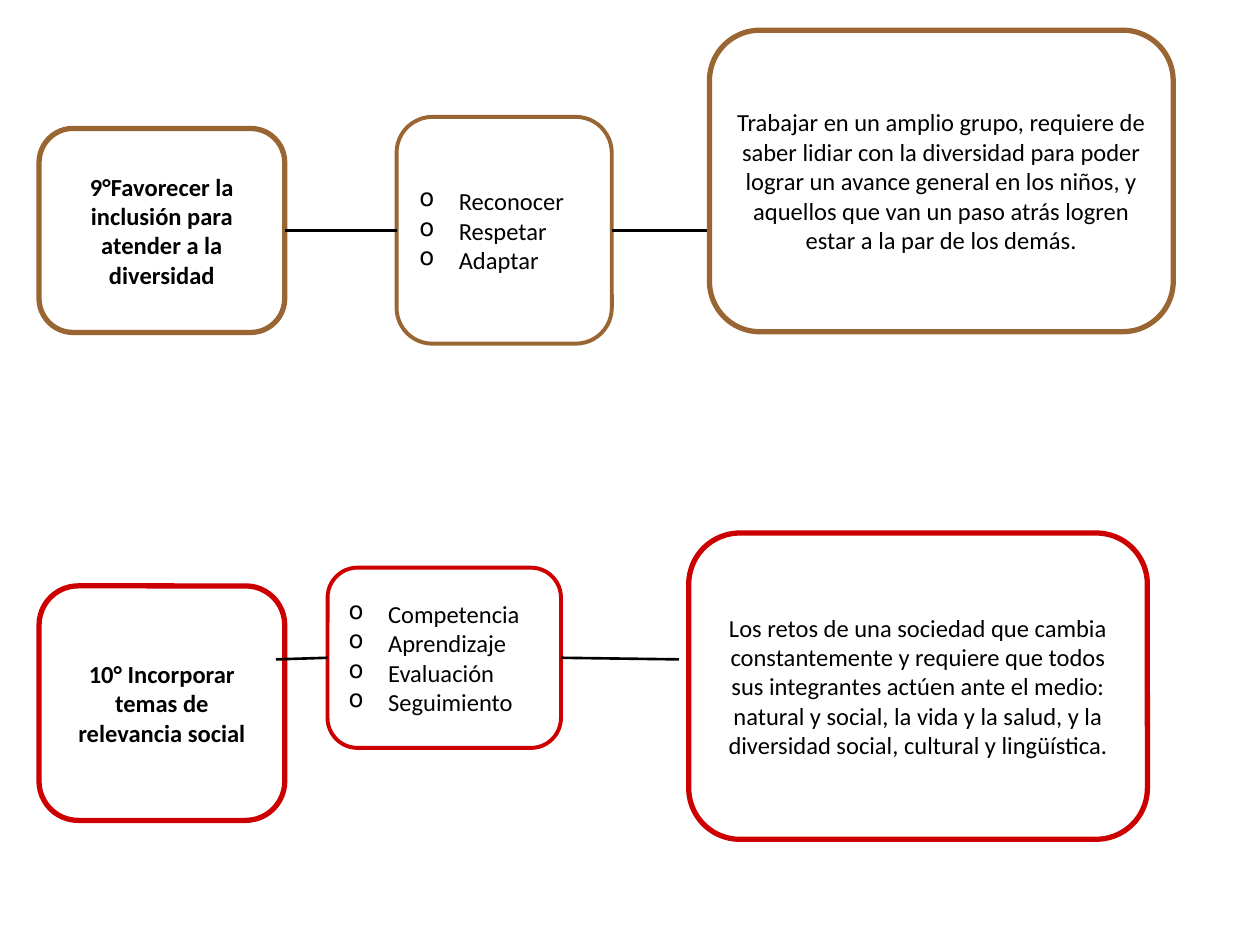
from dataclasses import dataclass
from lxml import etree
from pptx import Presentation
from pptx.dml.color import RGBColor
from pptx.enum.shapes import MSO_CONNECTOR, MSO_SHAPE
from pptx.enum.text import MSO_ANCHOR, PP_ALIGN
from pptx.oxml.ns import qn
from pptx.util import Pt

ROUND = MSO_SHAPE.ROUNDED_RECTANGLE
LINE = MSO_CONNECTOR.STRAIGHT
MIDDLE = MSO_ANCHOR.MIDDLE
LEFT, CENTER = PP_ALIGN.LEFT, PP_ALIGN.CENTER


@dataclass(frozen=True)
class Theme:
    font: str = "Calibri"
    size: float = 14
    ink: str = "000000"
    paper: str = "FFFFFF"
    thick: float = 3
    thin: float = 2.25
    link: float = 1.5
    indent: float = 22.5


THEME = Theme()

ROWS = [
    {
        "color": "996633",
        "title": ("9°Favorecer la inclusión para atender a la diversidad",
                  (22.3, 73.4, 140.4, 116.6)),
        "verbs": (["Reconocer", "Respetar", "Adaptar"],
                  (226.6, 66.8, 123, 129.6)),
        "reason": ("Trabajar en un amplio grupo, requiere de saber lidiar con "
                   "la diversidad para poder lograr un avance general en los "
                   "niños, y aquellos que van un paso atrás logren estar a la "
                   "par de los demás.",
                   (405.4, 17.3, 265, 172.3)),
        "ends": ((162.7, 131.6), (405.4, 131.6)),
    },
    {
        "color": "CC0000",
        "title": ("10° Incorporar temas de relevancia social",
                  (22.3, 334.8, 140.4, 134)),
        "verbs": (["Competencia", "Aprendizaje", "Evaluación", "Seguimiento"],
                  (187.2, 324.4, 133.4, 103)),
        "reason": ("Los retos de una sociedad que cambia constantemente y "
                   "requiere que todos sus integrantes actúen ante el medio: "
                   "natural y social, la vida y la salud, y la diversidad "
                   "social, cultural y lingüística.",
                   (393.6, 304.6, 262.1, 175)),
        "ends": ((157.7, 376.8), (388, 376.8)),
    },
]


def add_box(slide, lines, place, color, width, bold=False, bullet=False):
    box = slide.shapes.add_shape(ROUND, *map(Pt, place))
    box.shadow.inherit = False
    box.fill.solid()
    box.fill.fore_color.rgb = RGBColor.from_string(THEME.paper)
    box.line.color.rgb = RGBColor.from_string(color)
    box.line.width = Pt(width)
    frame = box.text_frame
    frame.word_wrap = True
    frame.vertical_anchor = MIDDLE
    for i, text in enumerate(lines):
        para = frame.paragraphs[0] if i == 0 else frame.add_paragraph()
        para.text = text
        para.alignment = LEFT if bullet else CENTER
        if bullet:
            props = para._p.get_or_add_pPr()
            props.set("marL", str(Pt(THEME.indent)))
            props.set("indent", str(-Pt(THEME.indent)))
            etree.SubElement(props, qn("a:buChar")).set("char", "o")
        para.font.name = THEME.font
        para.font.size = Pt(THEME.size)
        para.font.bold = bold
        para.font.color.rgb = RGBColor.from_string(THEME.ink)


def add_link(slide, start, end):
    link = slide.shapes.add_connector(LINE, *map(Pt, start + end))
    link.line.color.rgb = RGBColor.from_string(THEME.ink)
    link.line.width = Pt(THEME.link)
    etree.SubElement(link._element.spPr, qn("a:effectLst"))


def add_row(slide, row):
    color = row["color"]
    title, place = row["title"]
    add_box(slide, [title], place, color, THEME.thick, bold=True)
    verbs, place = row["verbs"]
    add_box(slide, verbs, place, color, THEME.thin, bullet=True)
    left, top, width, height = place
    mid = top + height / 2
    start, end = row["ends"]
    add_link(slide, start, (left, mid))
    add_link(slide, (left + width, mid), end)
    reason, place = row["reason"]
    add_box(slide, [reason], place, color, THEME.thick)


def main():
    deck = Presentation()
    deck.slide_width, deck.slide_height = Pt(720), Pt(540)
    slide = deck.slides.add_slide(deck.slide_layouts[6])
    for row in ROWS:
        add_row(slide, row)
    deck.save("out.pptx")


if __name__ == "__main__":
    main()
